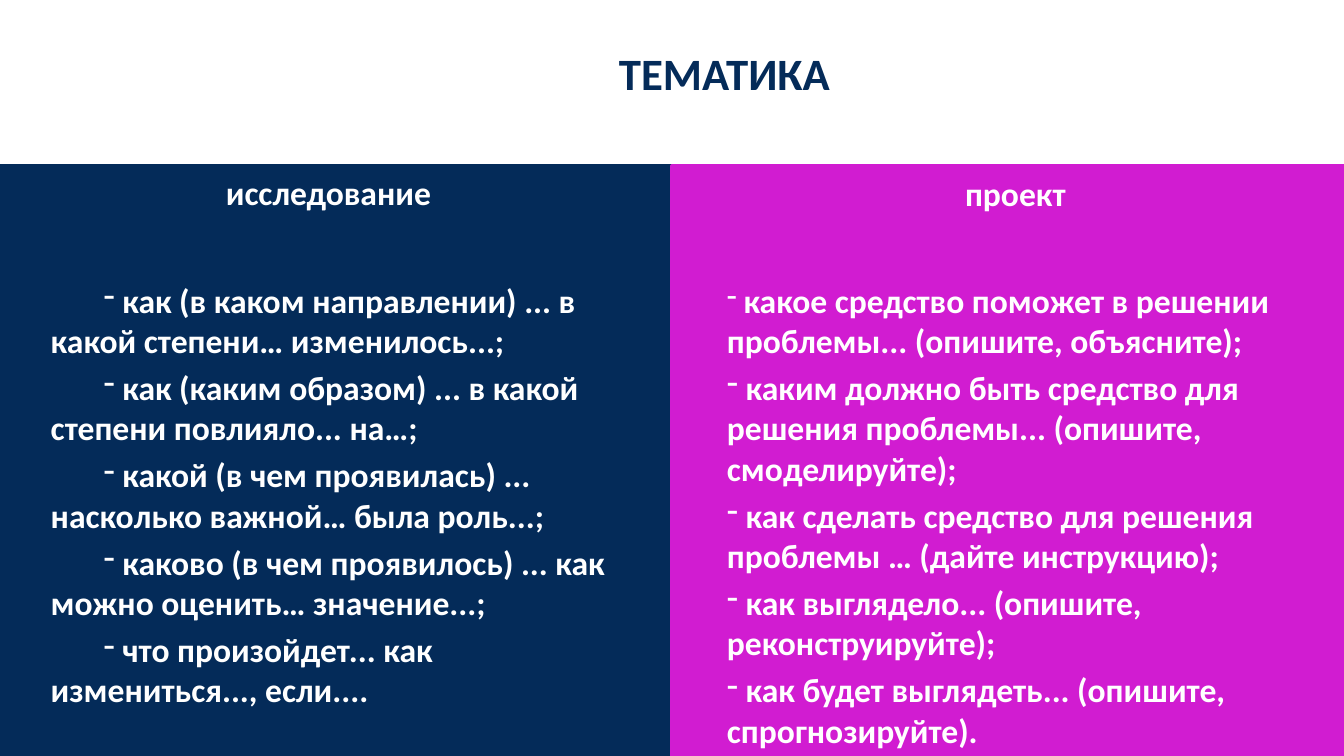
"""Build a slide that compares research topics with project topics."""
from dataclasses import dataclass

from lxml import etree
from pptx import Presentation
from pptx import util as u
from pptx.dml.color import RGBColor
from pptx.enum import shapes, text
from pptx.oxml import ns

NAVY = RGBColor(0x04, 0x2B, 0x59)
MAGENTA = RGBColor(0xD1, 0x1C, 0xD1)
WHITE = RGBColor(0xFF, 0xFF, 0xFF)
FONT = "Calibri"
PAGE_WIDTH, PAGE_HEIGHT = 25.4, 14.29
PANEL_TOP, PANEL_WIDTH = 3.14, PAGE_WIDTH / 2


@dataclass(frozen=True)
class Area:
    left: float
    top: float
    width: float
    height: float

    def lengths(self) -> tuple:
        return tuple(u.Cm(n) for n in (self.left, self.top, self.width, self.height))


@dataclass(frozen=True)
class Span:
    words: str
    size: float = 18
    bold: bool = True
    color: RGBColor = WHITE


@dataclass(frozen=True)
class Column:
    color: RGBColor
    panel: Area
    heading: str
    heading_area: Area
    body_area: Area
    indent: float
    items: tuple[tuple[Span, ...], ...]


COLUMNS = (
    Column(
        NAVY, Area(0, PANEL_TOP, PANEL_WIDTH, 11.15),
        "исследование", Area(0.71, 3.13, 11, 1.02),
        Area(0.71, 5.16, 11.23, 8.61), 1,
        (
            (Span(" как (в каком направлении) ... в какой степени… изменилось...;"),),
            (Span(" как (каким образом) ... в какой степени повлияло... на…;"),),
            (Span(" какой (в чем проявилась) ... насколько важной… была роль...;"),),
            (Span(" каково (в чем проявилось) ... как можно оценить… значение...;"),),
            (Span(" что произойдет... как измениться..., если...."),),
        ),
    ),
    Column(
        MAGENTA, Area(PANEL_WIDTH, PANEL_TOP, PANEL_WIDTH, 11.15),
        "проект", Area(13.69, 3.15, 11, 1.02),
        Area(13.49, 5.16, 11.23, 8.61), 0,
        (
            (Span(" ", 16, False),
             Span("какое средство поможет в решении проблемы... (опишите, объясните);")),
            (Span(" каким должно быть средство для решения проблемы... (опишите, смоделируйте);"),),
            (Span(" как сделать средство для решения проблемы … (дайте инструкцию);"),),
            (Span(" как выглядело... (опишите, реконструируйте);"),),
            (Span(" как будет выглядеть... (опишите, спрогнозируйте)."),),
        ),
    ),
)


def add_box(page, area: Area, anchor=text.MSO_ANCHOR.TOP):
    box = page.shapes.add_textbox(*area.lengths())
    box.text_frame.word_wrap = True
    box.text_frame.vertical_anchor = anchor
    return box.text_frame


def add_span(para, span: Span) -> None:
    run = para.add_run()
    run.text = span.words
    run.font.name = FONT
    run.font.size = u.Pt(span.size)
    run.font.bold = span.bold
    run.font.color.rgb = span.color


def add_heading(page, area: Area, span: Span, anchor=text.MSO_ANCHOR.TOP) -> None:
    para = add_box(page, area, anchor).paragraphs[0]
    para.alignment = text.PP_ALIGN.CENTER
    add_span(para, span)


def add_dash(para, indent: float) -> None:
    properties = para._p.get_or_add_pPr()
    properties.set("marL", "0")
    properties.set("indent", str(u.Cm(indent)))
    etree.SubElement(properties, ns.qn("a:buFontTx"))
    etree.SubElement(properties, ns.qn("a:buChar")).set("char", "-")


def add_panel(page, column: Column) -> None:
    panel = page.shapes.add_shape(shapes.MSO_SHAPE.RECTANGLE, *column.panel.lengths())
    panel.shadow.inherit = False
    panel.fill.solid()
    panel.fill.fore_color.rgb = column.color
    panel.line.color.rgb = column.color
    panel.line.width = u.Pt(2)


def add_items(page, column: Column) -> None:
    frame = add_box(page, column.body_area)
    for number, spans in enumerate(column.items):
        para = frame.add_paragraph() if number else frame.paragraphs[0]
        add_dash(para, column.indent)
        if number:
            para.space_before = u.Pt(3.6)
        for span in spans:
            add_span(para, span)


def main() -> None:
    deck = Presentation()
    deck.slide_width, deck.slide_height = u.Cm(PAGE_WIDTH), u.Cm(PAGE_HEIGHT)
    page = deck.slides.add_slide(deck.slide_layouts[6])
    add_heading(page, Area(2.69, 0.58, 22, 1.57), Span("ТЕМАТИКА", 24, color=NAVY),
                text.MSO_ANCHOR.MIDDLE)
    for column in COLUMNS:
        add_panel(page, column)
    for column in COLUMNS:
        add_items(page, column)
        add_heading(page, column.heading_area, Span(column.heading))
    deck.save("out.pptx")


if __name__ == "__main__":
    main()
